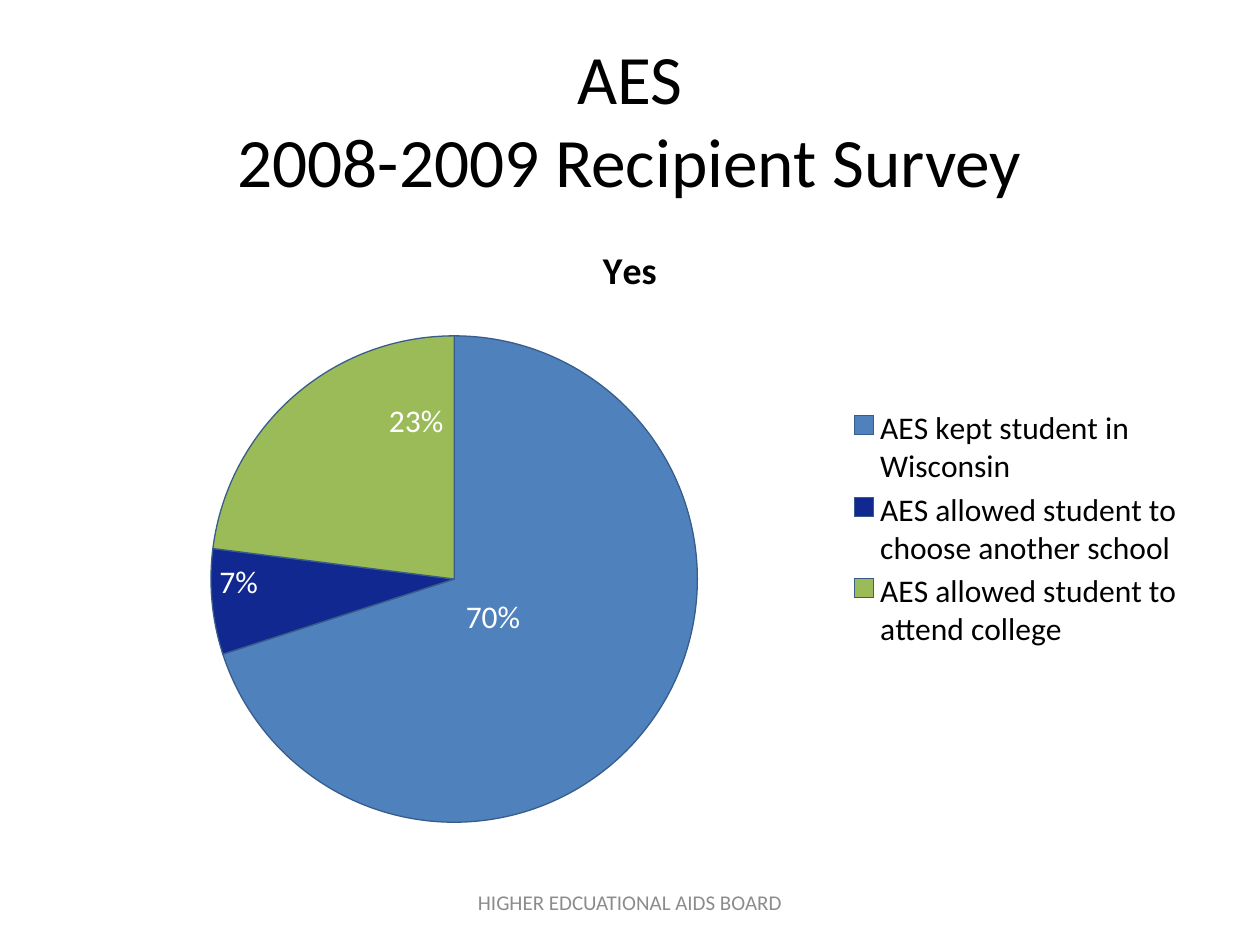
from dataclasses import dataclass
from typing import NamedTuple

from lxml.etree import SubElement
from pptx import Presentation
from pptx.chart.data import CategoryChartData as Data
from pptx.dml.color import RGBColor as Rgb
from pptx.enum.chart import XL_CHART_TYPE as Kind
from pptx.enum.chart import XL_LABEL_POSITION as Spot
from pptx.enum.chart import XL_LEGEND_POSITION as Side
from pptx.enum.text import MSO_ANCHOR as Anchor
from pptx.enum.text import PP_ALIGN as Align
from pptx.oxml.ns import qn
from pptx.util import Inches, Pt


@dataclass(frozen=True)
class Theme:
    """Colours and type sizes of the slide."""
    font: str = "Calibri"
    ink: str = "000000"
    soft: str = "8C8C8C"
    pale: str = "FFFFFF"
    edge: str = "385D8A"
    title: float = 39.6
    head: float = 21.6
    body: float = 18
    foot: float = 12


class Box(NamedTuple):
    """Left, top, width and height as shares of the whole."""
    x: float
    y: float
    w: float
    h: float


class Slice(NamedTuple):
    """One answer, its percentage, colour and optional label shift."""
    name: str
    value: int
    fill: str
    shift: tuple[float, float] | None = None


THEME = Theme()
WIDE, HIGH = Inches(10), Inches(7.5)
SLICES = [
    Slice("AES kept student in Wisconsin", 70, "4F81BD", (-0.11, -0.13)),
    Slice("AES allowed student to choose another school", 7, "10288F"),
    Slice("AES allowed student to attend college", 23, "9BBB59", (0.08, 0)),
]


def place(box: Box) -> tuple[int, ...]:
    """Turn shares of the slide into lengths."""
    return tuple(int(share * side) for share, side in zip(box, (WIDE, HIGH) * 2))


def style(font, size: float, color: str, bold: bool = False) -> None:
    """Set the face, size, weight and colour of a font."""
    font.name, font.size, font.bold = THEME.font, Pt(size), bold
    font.color.rgb = Rgb.from_string(color)


def write(slide, text: str, *, box: Box, size: float, color: str) -> None:
    """Add centred text in a box."""
    frame = slide.shapes.add_textbox(*place(box)).text_frame
    frame.word_wrap, frame.vertical_anchor = True, Anchor.MIDDLE
    line = frame.paragraphs[0]
    line.text, line.alignment = text, Align.CENTER
    for run in line.runs:
        style(run.font, size, color)


def lay(part, index: int, **values: float | str) -> None:
    """Give a chart part a manual layout at a child index."""
    for old in part.findall(qn("c:layout")):
        part.remove(old)
    layout = SubElement(part, qn("c:layout"))
    manual = SubElement(layout, qn("c:manualLayout"))
    for key, value in values.items():
        SubElement(manual, qn(f"c:{key}")).set("val", str(value))
    part.insert(index, layout)


def label(labels) -> None:
    """Format one label or a set of labels."""
    style(labels.font, THEME.body, THEME.pale)
    labels.position = Spot.INSIDE_END


def draw(slide, slices: list[Slice], box: Box) -> None:
    """Add the pie chart with its title, labels and legend."""
    data = Data()
    data.categories = [item.name for item in slices]
    data.add_series("Yes", [item.value for item in slices])
    chart = slide.shapes.add_chart(Kind.PIE, *place(box), data).chart
    style(chart.font, THEME.body, THEME.ink)

    chart.has_title = True
    head = chart.chart_title.text_frame
    head.text = "Yes"
    style(head.paragraphs[0].runs[0].font, THEME.head, THEME.ink, bold=True)

    chart.has_legend = True
    chart.legend.position = Side.RIGHT
    chart.legend.include_in_layout = False
    style(chart.legend.font, THEME.body, THEME.ink)

    series = chart.plots[0].series[0]
    labels = series.data_labels
    labels.show_value, labels.show_percentage = False, True
    label(labels)
    for index, item in enumerate(slices):
        point = series.points[index]
        point.format.fill.solid()
        point.format.fill.fore_color.rgb = Rgb.from_string(item.fill)
        point.format.line.color.rgb = Rgb.from_string(THEME.edge)
        point.format.line.width = Pt(0.75)
        if item.shift:
            label(point.data_label)

    root = chart.element
    for part in root.iter(qn("c:dLbl")):
        x, y = slices[int(part.find(qn("c:idx")).get("val"))].shift
        lay(part, 1, x=x, y=y)
        part.find(qn("c:showVal")).set("val", "0")
        part.find(qn("c:showPercent")).set("val", "1")
    edge = {"xMode": "edge", "yMode": "edge"}
    lay(next(root.iter(qn("c:plotArea"))), 0, layoutTarget="inner", **edge,
        x=0.13, y=0.19, w=0.43, h=0.78)
    lay(next(root.iter(qn("c:legend"))), 1, **edge, x=0.69, y=0.3, w=0.3, h=0.4)


def main() -> None:
    """Build and save the slide."""
    deck = Presentation()
    deck.slide_width, deck.slide_height = WIDE, HIGH
    slide = deck.slides.add_slide(deck.slide_layouts[6])
    write(slide, "AES\v2008-2009 Recipient Survey", box=Box(0.05, 0.04, 0.9, 0.17),
          size=THEME.title, color=THEME.ink)
    draw(slide, SLICES, Box(0.05, 0.23, 0.9, 0.66))
    write(slide, "HIGHER EDCUATIONAL AIDS BOARD", box=Box(0.34, 0.93, 0.32, 0.05),
          size=THEME.foot, color=THEME.soft)
    deck.save("out.pptx")


if __name__ == "__main__":
    main()
